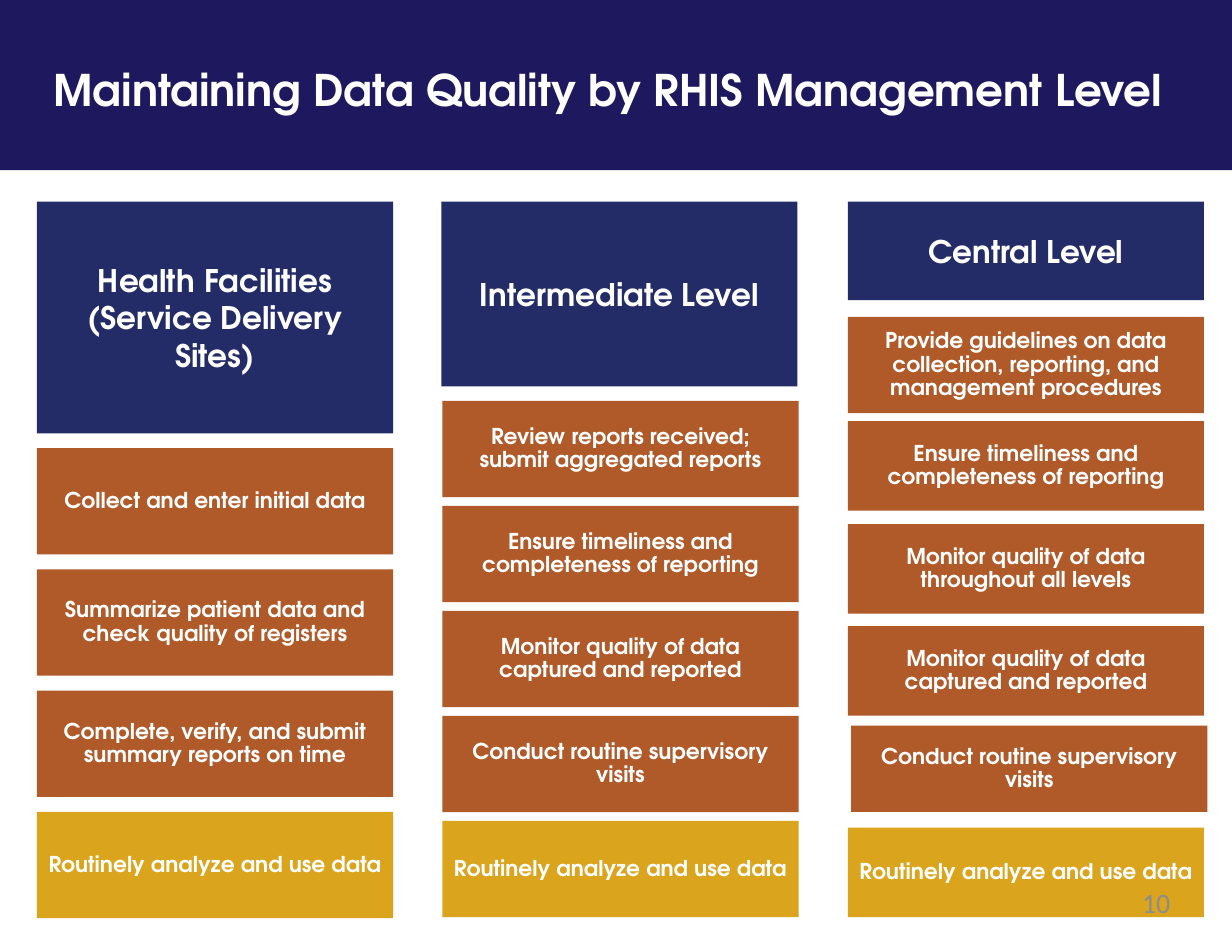
from pptx import Presentation
from pptx.dml.color import RGBColor
from pptx.enum.shapes import MSO_SHAPE as Shape
from pptx.enum.text import MSO_ANCHOR as Anchor, PP_ALIGN as Align
from pptx.util import Inches, Pt

BANNER = RGBColor(0x1E, 0x18, 0x5F)
NAVY = RGBColor(0x23, 0x2C, 0x67)
RUST = RGBColor(0xB0, 0x5A, 0x2A)
GOLD = RGBColor(0xDA, 0xA5, 0x1C)
WHITE = RGBColor(0xFF, 0xFF, 0xFF)
GRAY = RGBColor(0x8C, 0x8C, 0x8C)
FONT = "TeX Gyre Adventor"
BOX_WIDTH = 3.18
HEADER_TOP = 1.8
SHARED_TASK = "Routinely analyze and use data"


def evenly(top, pitch, height, count):
    """Return (top, height) pairs for equally spaced boxes."""
    return [(top + pitch * row, height) for row in range(count)]


FACILITY_TASKS = [
    "Collect and enter initial data",
    "Summarize patient data and check quality of registers",
    "Complete, verify, and submit summary reports on time",
    SHARED_TASK,
]
INTERMEDIATE_TASKS = [
    "Review reports received; submit aggregated reports",
    "Ensure timeliness and completeness of reporting",
    "Monitor quality of data captured and reported",
    "Conduct routine supervisory visits",
    SHARED_TASK,
]
CENTRAL_TASKS = [
    "Provide guidelines on data collection, reporting, and management procedures",
    "Ensure timeliness and completeness of reporting",
    "Monitor quality of data throughout all levels",
    "Monitor quality of data captured and reported",
    "Conduct routine supervisory visits",
    SHARED_TASK,
]
CENTRAL_ROWS = [(2.83, 0.86), (3.76, 0.8), (4.68, 0.8), (5.59, 0.8), (6.48, 0.77), (7.39, 0.8)]

LEVELS = [
    (0.33, 0.33, 2.07, "Health Facilities\n(Service Delivery Sites)",
     FACILITY_TASKS, evenly(4, 1.083, 0.95, 4)),
    (3.94, 3.95, 1.65, "Intermediate Level",
     INTERMEDIATE_TASKS, evenly(3.58, 0.9375, 0.86, 5)),
    (7.57, 7.57, 0.88, "Central Level", CENTRAL_TASKS, CENTRAL_ROWS),
]


def write(frame, text, size, color, align, font=FONT, bold=True, spacing=None):
    """Fill a text frame with uniformly styled paragraphs."""
    frame.word_wrap = True
    frame.text = text
    for paragraph in frame.paragraphs:
        paragraph.alignment = align
        paragraph.line_spacing = spacing
        paragraph.font.name = font
        paragraph.font.size = Pt(size)
        paragraph.font.bold = bold
        paragraph.font.color.rgb = color


def add_box(slide, left, top, width, height, fill):
    """Add a plain filled rectangle."""
    shape = slide.shapes.add_shape(
        Shape.RECTANGLE, Inches(left), Inches(top), Inches(width), Inches(height))
    shape.shadow.inherit = False
    shape.fill.solid()
    shape.fill.fore_color.rgb = fill
    shape.line.fill.background()
    return shape


def add_label_box(slide, left, top, height, fill, text, size, spacing=None):
    """Add a rectangle with centred white text."""
    frame = add_box(slide, left, top, BOX_WIDTH, height, fill).text_frame
    frame.vertical_anchor = Anchor.MIDDLE
    write(frame, text, size, WHITE, Align.CENTER, spacing=spacing)


def add_text(slide, left, top, width, height, *style, **options):
    """Add a text box without margins."""
    frame = slide.shapes.add_textbox(
        Inches(left), Inches(top), Inches(width), Inches(height)).text_frame
    frame.margin_left = frame.margin_right = frame.margin_top = frame.margin_bottom = 0
    write(frame, *style, **options)


def add_level(slide, header_left, task_left, header_height, title, tasks, rows):
    """Add one management level: its header above its tasks."""
    add_label_box(slide, header_left, HEADER_TOP, header_height, NAVY, title, 20)
    for task, (top, height) in zip(tasks, rows):
        left = 7.6 if top == 6.48 else task_left
        fill = GOLD if task == SHARED_TASK else RUST
        add_label_box(slide, left, top, height, fill, task, 14, spacing=0.9)


def main():
    """Build and save the slide."""
    presentation = Presentation()
    presentation.slide_width = Inches(11)
    presentation.slide_height = Inches(8.5)
    slide = presentation.slides.add_slide(presentation.slide_layouts[6])
    add_box(slide, 0, 0, 11, 1.52, BANNER)
    add_text(slide, 0.48, 0.56, 10.18, 0.94,
             "Maintaining Data Quality by RHIS Management Level", 28, WHITE, Align.LEFT)
    for level in LEVELS:
        add_level(slide, *level)
    add_text(slide, 7.92, 7.91, 2.53, 0.42, "10", 18, GRAY, Align.RIGHT,
             font="Calibri", bold=False)
    presentation.save("out.pptx")


if __name__ == "__main__":
    main()
